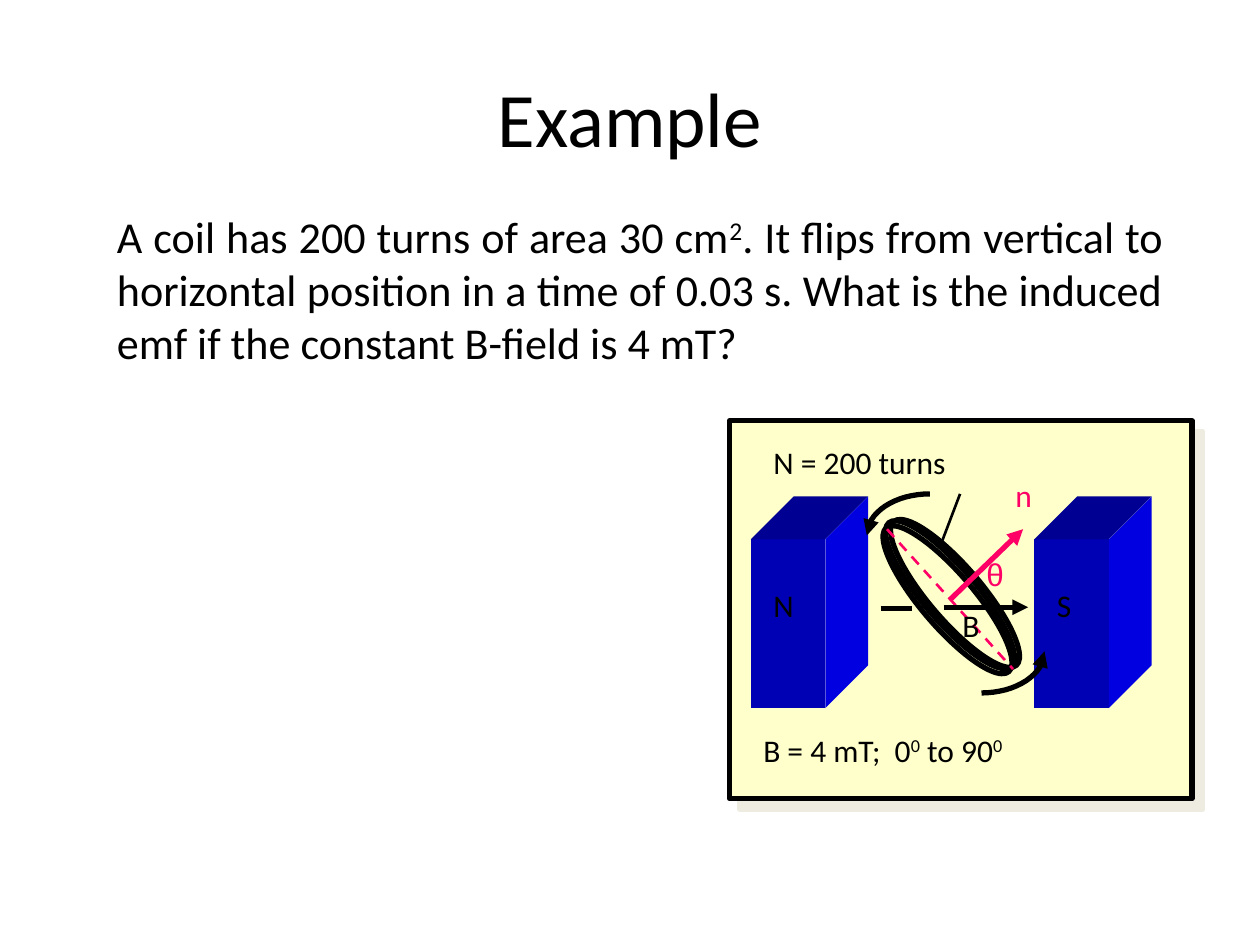
from math import cos, pi, sin

from lxml import etree
from pptx import Presentation
from pptx.dml.color import RGBColor
from pptx.enum.dml import MSO_LINE
from pptx.enum.shapes import MSO_CONNECTOR, MSO_SHAPE
from pptx.enum.text import MSO_ANCHOR as ANCHOR, PP_ALIGN as ALIGN
from pptx.oxml.ns import qn
from pptx.util import Inches, Pt

BLACK, PINK = "000000", "FF0066"


def color(value):
    return RGBColor.from_string(value)


class Diagram:
    """Draws styled text, shapes and arrows on one slide."""

    font = "Calibri"

    def __init__(self, page):
        self.page = page
        self.shapes = page.shapes

    def text(self, left, top, width, height, words, size=18, fill=BLACK,
             font=None, align=ALIGN.LEFT, anchor=ANCHOR.TOP):
        box = self.shapes.add_textbox(*map(Inches, (left, top, width, height)))
        frame = box.text_frame
        frame.word_wrap = True
        frame.vertical_anchor = anchor
        para = frame.paragraphs[0]
        para.alignment = align
        for index, part in enumerate(words.split("^")):
            span = para.add_run()
            span.text = part
            span.font.size = Pt(size)
            span.font.name = font or self.font
            span.font.color.rgb = color(fill)
            if index % 2:
                span.font._element.set("baseline", "30000")

    def outline(self, shape, stroke, width, arrow=False):
        shape.line.color.rgb = color(stroke)
        shape.line.width = Pt(width)
        if arrow:
            line = shape.line._get_or_add_ln()
            etree.SubElement(line, qn("a:tailEnd"), type="triangle")

    def panel(self, left, top, width, height):
        shape = self.shapes.add_shape(
            MSO_SHAPE.RECTANGLE, *map(Inches, (left, top, width, height)))
        shape.fill.solid()
        shape.fill.fore_color.rgb = color("FFFFCC")
        self.outline(shape, BLACK, 3)
        effects = etree.SubElement(shape._element.spPr, qn("a:effectLst"))
        shadow = etree.SubElement(effects, qn("a:outerShdw"), dist=str(Pt(8.5)),
                                  dir="2700000", algn="ctr", rotWithShape="0")
        etree.SubElement(shadow, qn("a:srgbClr"), val="EEECE1")

    def ring(self, left, top):
        shape = self.shapes.add_shape(
            MSO_SHAPE.OVAL, *map(Inches, (left, top, 0.42, 1.5)))
        shape.rotation = 319.6
        shape.shadow.inherit = False
        shape.fill.background()
        self.outline(shape, BLACK, 3)

    def path_shape(self, points, close):
        points = [(Inches(x), Inches(y)) for x, y in points]
        builder = self.shapes.build_freeform(*points[0])
        builder.add_line_segments(points[1:], close=close)
        shape = builder.convert_to_shape()
        shape.shadow.inherit = False
        return shape

    def face(self, points, fill):
        shape = self.path_shape(points, True)
        shape.fill.solid()
        shape.fill.fore_color.rgb = color(fill)
        shape.line.fill.background()

    def magnet(self, left, top, width=0.59, height=1.34, depth=0.34):
        right, bottom = left + width, top + height
        self.face([(left, top), (right, top), (right, bottom), (left, bottom)], "0000B4")
        self.face([(left, top), (left + depth, top - depth),
                   (right + depth, top - depth), (right, top)], "000092")
        self.face([(right, top), (right + depth, top - depth),
                   (right + depth, bottom - depth), (right, bottom)], "0000E1")

    def turn_arrow(self, x, y, sign, steps=16):
        angles = [pi / 2 * step / steps for step in range(steps + 1)]
        shape = self.path_shape(
            [(x + sign * 0.5 * sin(a), y + sign * 0.33 * cos(a)) for a in angles], False)
        shape.fill.background()
        self.outline(shape, BLACK, 3, arrow=True)

    def line(self, x1, y1, x2, y2, stroke=BLACK, width=3.0, arrow=False, dashed=False):
        shape = self.shapes.add_connector(
            MSO_CONNECTOR.STRAIGHT, *map(Inches, (x1, y1, x2, y2)))
        if dashed:
            shape.line.dash_style = MSO_LINE.DASH
        self.outline(shape, stroke, width, arrow)
        etree.SubElement(shape._element.spPr, qn("a:effectLst"))


def main():
    deck = Presentation()
    deck.slide_width, deck.slide_height = Inches(10), Inches(7.5)
    coil = Diagram(deck.slides.add_slide(deck.slide_layouts[6]))

    coil.text(0.5, 0.3, 9, 1.25, "Example", size=44, align=ALIGN.CENTER,
              anchor=ANCHOR.MIDDLE)
    coil.text(0.83, 1.67, 8.5, 1.25,
              "A coil has 200 turns of area 30 cm^2^. It flips from vertical to "
              "horizontal position in a time of 0.03 s. What is the induced emf "
              "if the constant B-field is 4 mT?",
              size=25.2, align=ALIGN.JUSTIFY, anchor=ANCHOR.MIDDLE)

    coil.panel(5.79, 3.34, 3.67, 3)
    for pole, left in (("N", 5.96), ("S", 8.21)):
        coil.magnet(left, 4.28)
        coil.text(left + 0.08, 4.6, 0.5, 0.5, pole)
    for left, top in ((7.31, 4.01), (7.37, 3.96), (7.33, 3.97)):
        coil.ring(left, top)

    coil.line(7.54, 4.76, 8.12, 4.2, PINK, arrow=True)
    coil.line(7.04, 4.2, 8.04, 5.31, PINK, 1.5, dashed=True)
    coil.line(7.49, 4.82, 8.16, 4.82, arrow=True)
    coil.line(6.99, 4.83, 7.24, 4.83)
    coil.line(7.62, 3.92, 7.46, 4.34, width=1.5)

    coil.text(7.96, 3.73, 0.42, 0.5, "n", fill=PINK)
    coil.text(7.73, 4.36, 0.42, 0.5, "θ", fill=PINK, font="Arial")
    coil.text(7.54, 4.76, 0.5, 0.5, "B")
    coil.text(6.04, 3.47, 2.92, 0.5, "N = 200 turns")
    coil.text(5.96, 5.75, 3.33, 0.5, "B = 4 mT;  0^0^ to 90^0^")

    coil.turn_arrow(7.79, 5.17, 1)
    coil.turn_arrow(7.38, 4.25, -1)
    deck.save("out.pptx")


if __name__ == "__main__":
    main()
